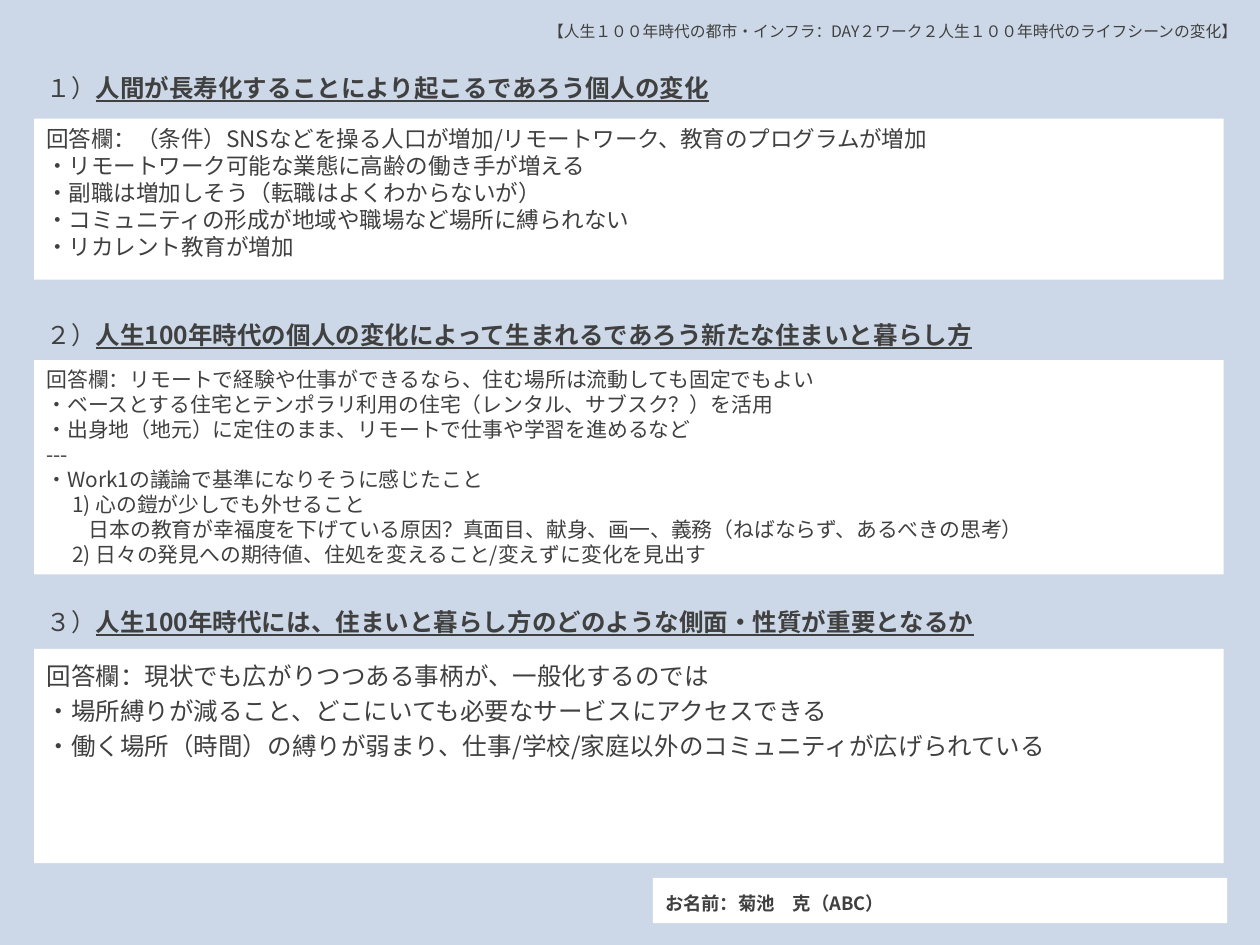
from dataclasses import dataclass

from lxml.etree import SubElement
from pptx import Presentation
from pptx.dml.color import RGBColor
from pptx.enum.shapes import MSO_SHAPE
from pptx.enum.text import MSO_ANCHOR, PP_ALIGN
from pptx.oxml.ns import qn
from pptx.util import Cm, Pt


@dataclass(frozen=True)
class Theme:
    font: str = "Noto Sans CJK JP"
    back: RGBColor = RGBColor(0xCC, 0xD8, 0xE7)
    panel: RGBColor = RGBColor(0xFF, 0xFF, 0xFF)
    ink: RGBColor = RGBColor(0x40, 0x40, 0x40)
    note: float = 9
    name: float = 10.5
    head: float = 14
    first: float = 12.9
    second: float = 11.9
    third: float = 14


THEME = Theme()
LEFT, WIDTH = 0.69, 23.98
HEAD_TALL = 1.14
LOOSE = 1.2

# Each section: number, title, title top, title width, panel top, panel height,
# type size, line spacing, answer lines
SECTIONS = [
    ("１）", "人間が長寿化することにより起こるであろう個人の変化",
     1.22, 14.22, 2.39, 3.25, THEME.first, 1.0, [
         "回答欄：（条件）SNSなどを操る人口が増加/リモートワーク、教育のプログラムが増加",
         "・リモートワーク可能な業態に高齢の働き手が増える",
         "・副職は増加しそう（転職はよくわからないが）",
         "・コミュニティの形成が地域や職場など場所に縛られない",
         "・リカレント教育が増加",
     ]),
    ("２）", "人生100年時代の個人の変化によって生まれるであろう新たな住まいと暮らし方",
     6.2, 21.29, 7.26, 4.32, THEME.second, 1.0, [
         "回答欄：リモートで経験や仕事ができるなら、住む場所は流動しても固定でもよい",
         "・ベースとする住宅とテンポラリ利用の住宅（レンタル、サブスク？）を活用",
         "・出身地（地元）に定住のまま、リモートで仕事や学習を進めるなど",
         "---",
         "・Work1の議論で基準になりそうに感じたこと",
         "1) 心の鎧が少しでも外せること",
         "日本の教育が幸福度を下げている原因？真面目、献身、画一、義務（ねばならず、あるべきの思考）",
         "2) 日々の発見への期待値、住処を変えること/変えずに変化を見出す",
     ]),
    ("３）", "人生100年時代には、住まいと暮らし方のどのような側面・性質が重要となるか",
     11.99, 21.29, 13.08, 4.32, THEME.third, LOOSE, [
         "回答欄：現状でも広がりつつある事柄が、一般化するのでは",
         "・場所縛りが減ること、どこにいても必要なサービスにアクセスできる",
         "・働く場所（時間）の縛りが弱まり、仕事/学校/家庭以外のコミュニティが広げられている",
     ]),
]


def style(run, size, strong=False, line=False):
    font = run.font
    font.name, font.size = THEME.font, Pt(size)
    font.color.rgb = THEME.ink
    if strong:
        font.bold = True
    if line:
        font.underline = True
    SubElement(run._r.rPr, qn("a:ea")).set("typeface", THEME.font)


def indent(para):
    """Set numbered lines in one step, and the remark below them two steps."""
    step = {"1": 0.52, "2": 0.52, "日": 0.85}.get(para.text[0])
    if step:
        para._p.get_or_add_pPr().set("marL", str(Cm(step)))


def add_text(slide, left, top, width, height):
    box = slide.shapes.add_textbox(Cm(left), Cm(top), Cm(width), Cm(height))
    box.text_frame.word_wrap = True
    para = box.text_frame.paragraphs[0]
    para.line_spacing = LOOSE
    return para


def add_panel(slide, place, lines, size, space, anchor=MSO_ANCHOR.TOP, strong=False):
    """Add a white box holding one paragraph for each line."""
    box = slide.shapes.add_shape(MSO_SHAPE.RECTANGLE, *map(Cm, place))
    box.shadow.inherit = False
    box.fill.solid()
    box.fill.fore_color.rgb = THEME.panel
    box.line.fill.background()
    frame = box.text_frame
    frame.word_wrap = True
    frame.vertical_anchor = anchor
    frame.text = "\n".join(lines)
    for para in frame.paragraphs:
        para.alignment = PP_ALIGN.LEFT
        para.line_spacing = space
        indent(para)
        style(para.runs[0], size, strong)


def add_head(slide, mark, title, top, width):
    para = add_text(slide, LEFT, top, width, HEAD_TALL)
    for text, strong in ((mark, False), (title, True)):
        run = para.add_run()
        run.text = text
        style(run, THEME.head, strong, strong)


def add_note(slide, text):
    para = add_text(slide, 10.8, 0.23, 14.6, 0.91)
    para.text = text
    style(para.runs[0], THEME.note)


def main():
    deck = Presentation()
    deck.slide_width, deck.slide_height = Cm(25.4), Cm(19.05)
    slide = deck.slides.add_slide(deck.slide_layouts[6])
    slide.background.fill.solid()
    slide.background.fill.fore_color.rgb = THEME.back

    add_note(slide, "【人生１００年時代の都市・インフラ：DAY２ワーク２人生１００年時代のライフシーンの変化】")
    for mark, title, top, width, start, tall, size, space, lines in SECTIONS:
        add_head(slide, mark, title, top, width)
        add_panel(slide, (LEFT, start, WIDTH, tall), lines, size, space)
    add_panel(slide, (13.16, 17.7, 11.58, 0.91), ["お名前：菊池　克（ABC）"],
              THEME.name, LOOSE, MSO_ANCHOR.MIDDLE, strong=True)
    deck.save("out.pptx")


if __name__ == "__main__":
    main()
